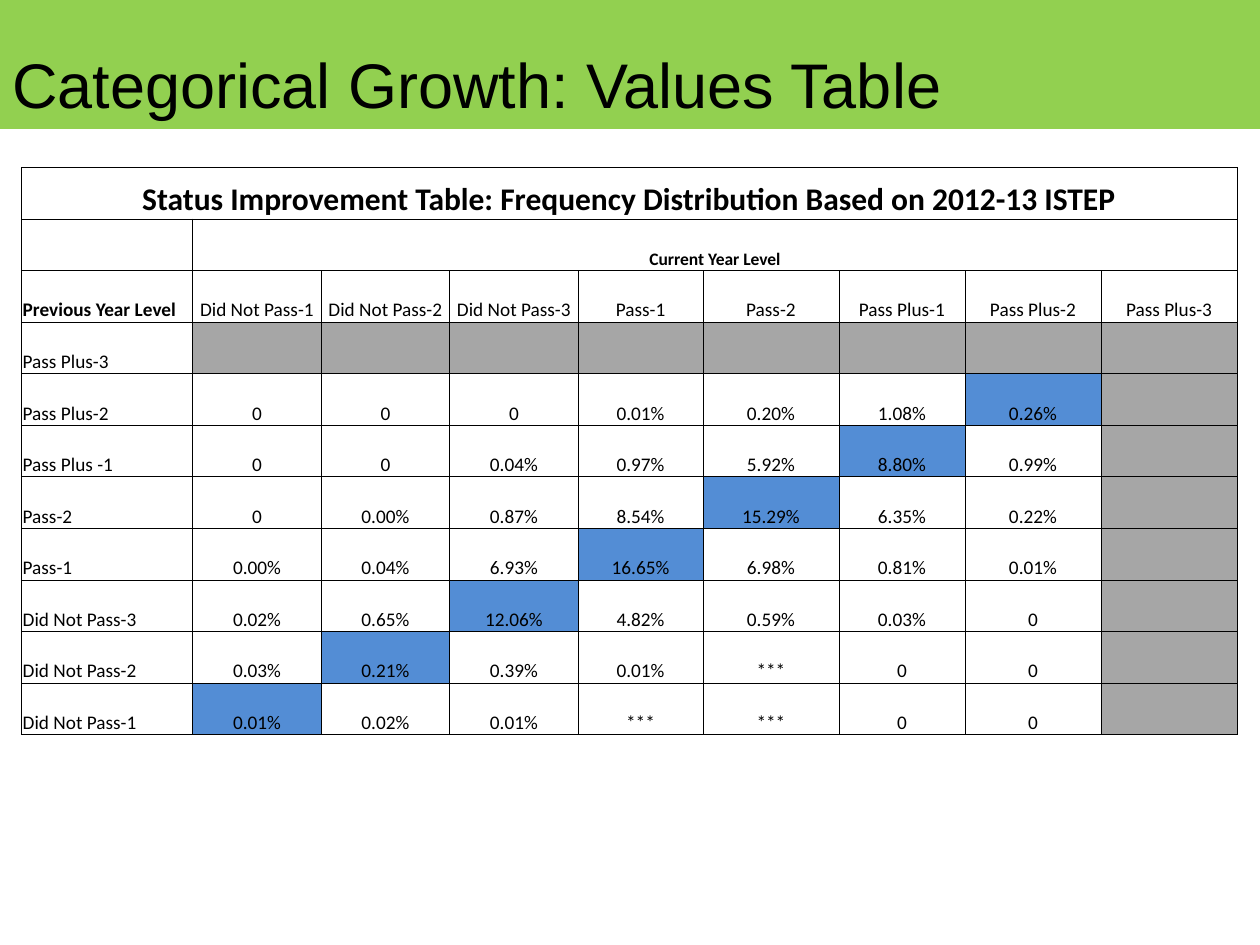
from lxml import etree
from pptx import Presentation
from pptx.dml.color import RGBColor
from pptx.enum import shapes, text
from pptx.oxml.ns import qn
from pptx.util import Inches, Pt

BLACK, GREEN, GREY, BLUE = "000000", "92D050", "A6A6A6", "538DD5"
TABLE_TITLE = "Status Improvement Table: Frequency Distribution Based on 2012-13 ISTEP"
COLUMN_WIDTHS = [1.36, 1.02, 1.02, 1.02, 0.99, 1.08, 1, 1.08, 1.08]
TABLE_HEIGHT = 4.5
LEVELS = ["Did Not Pass-1", "Did Not Pass-2", "Did Not Pass-3", "Pass-1",
          "Pass-2", "Pass Plus-1", "Pass Plus-2", "Pass Plus-3"]
FREQUENCIES = [
    ["Pass Plus-3"],
    ["Pass Plus-2", "0", "0", "0", "0.01%", "0.20%", "1.08%", "0.26%"],
    ["Pass Plus -1", "0", "0", "0.04%", "0.97%", "5.92%", "8.80%", "0.99%"],
    ["Pass-2", "0", "0.00%", "0.87%", "8.54%", "15.29%", "6.35%", "0.22%"],
    ["Pass-1", "0.00%", "0.04%", "6.93%", "16.65%", "6.98%", "0.81%", "0.01%"],
    ["Did Not Pass-3", "0.02%", "0.65%", "12.06%", "4.82%", "0.59%", "0.03%", "0"],
    ["Did Not Pass-2", "0.03%", "0.21%", "0.39%", "0.01%", "***", "0", "0"],
    ["Did Not Pass-1", "0.01%", "0.02%", "0.01%", "***", "***", "0", "0"],
]
ROWS = [[TABLE_TITLE], ["", "Current Year Level"],
        ["Previous Year Level"] + LEVELS] + FREQUENCIES
FIRST_DATA_ROW = 3


def color(hex_string):
    return RGBColor.from_string(hex_string)


def format_text(paragraph, font_name, size, bold=False):
    for run in paragraph.runs:
        run.font.name = font_name
        run.font.size = Pt(size)
        run.font.bold = bold
        run.font.color.rgb = color(BLACK)


def add_banner(slide):
    shape = slide.shapes.add_shape(shapes.MSO_SHAPE.RECTANGLE, Inches(0),
                                   Inches(0.01), Inches(10), Inches(1))
    shape.shadow.inherit = False
    shape.fill.solid()
    shape.fill.fore_color.rgb = color(GREEN)
    shape.line.color.rgb = color(GREEN)
    shape.line.width = Pt(2)


def add_title(slide, title):
    box = slide.shapes.add_textbox(Inches(0), Inches(0.33), Inches(9), Inches(0.67))
    text_frame = box.text_frame
    text_frame.word_wrap = True
    text_frame.vertical_anchor = text.MSO_ANCHOR.MIDDLE
    text_frame.text = title
    format_text(text_frame.paragraphs[0], "Arial", 36)


def set_borders(cell):
    # Borders come before the fill in the cell properties
    properties = cell._tc.get_or_add_tcPr()
    for side in ("a:lnL", "a:lnR", "a:lnT", "a:lnB"):
        line = etree.SubElement(properties, qn(side), w=str(Pt(0.5)))
        fill = etree.SubElement(line, qn("a:solidFill"))
        etree.SubElement(fill, qn("a:srgbClr"), val=BLACK)


def cell_fill(row, column):
    if row < FIRST_DATA_ROW or column == 0:
        return None
    if row == FIRST_DATA_ROW or column == len(LEVELS):
        return GREY
    # Students who stayed at the same level
    return BLUE if row + column == len(ROWS) else None


def format_cell(cell, row, column):
    cell.margin_left = cell.margin_right = cell.margin_top = Inches(0.01)
    cell.margin_bottom = 0
    cell.vertical_anchor = text.MSO_ANCHOR.BOTTOM
    set_borders(cell)
    fill = cell_fill(row, column)
    if fill:
        cell.fill.solid()
        cell.fill.fore_color.rgb = color(fill)
    else:
        cell.fill.background()
    paragraph = cell.text_frame.paragraphs[0]
    if row == 0 or column > 0:
        paragraph.alignment = text.PP_ALIGN.CENTER
    size = {0: 18, 1: 10}.get(row, 11)
    format_text(paragraph, "Calibri", size, bold=row < 2 or (row, column) == (2, 0))


def add_frequency_table(slide):
    table = slide.shapes.add_table(len(ROWS), len(COLUMN_WIDTHS), Inches(0.17),
                                   Inches(1.33), Inches(sum(COLUMN_WIDTHS)),
                                   Inches(TABLE_HEIGHT)).table
    for column, width in zip(table.columns, COLUMN_WIDTHS):
        column.width = Inches(width)
    for row in table.rows:
        row.height = Inches(TABLE_HEIGHT / len(ROWS))

    # Heading spans
    last = len(COLUMN_WIDTHS) - 1
    table.cell(0, 0).merge(table.cell(0, last))
    table.cell(1, 1).merge(table.cell(1, last))

    for row, values in enumerate(ROWS):
        for column in range(len(COLUMN_WIDTHS)):
            cell = table.cell(row, column)
            if column < len(values):
                cell.text_frame.text = values[column]
            format_cell(cell, row, column)


def main():
    presentation = Presentation()
    presentation.slide_width = Inches(10)
    presentation.slide_height = Inches(7.5)
    slide = presentation.slides.add_slide(presentation.slide_layouts[6])
    add_banner(slide)
    add_title(slide, "Categorical Growth: Values Table")
    add_frequency_table(slide)
    presentation.save("out.pptx")


if __name__ == "__main__":
    main()
